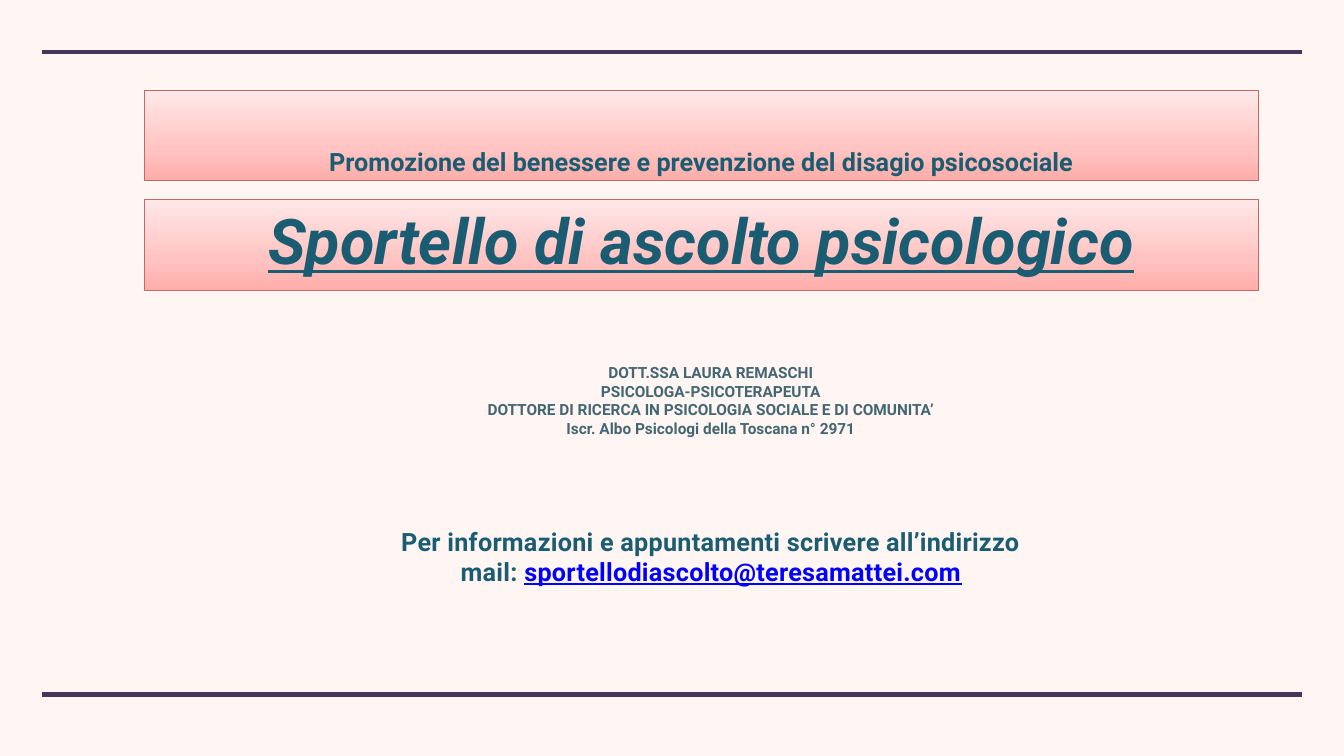
from copy import deepcopy

from lxml import etree
from pptx import Presentation
from pptx.dml.color import RGBColor
from pptx.enum.shapes import MSO_CONNECTOR as Connector, MSO_SHAPE as Shape
from pptx.enum.text import MSO_ANCHOR as Anchor, PP_ALIGN as Align
from pptx.oxml.ns import qn
from pptx.util import Cm, Pt

FONT = "Roboto"
TEAL, GREY_TEAL, LINK_BLUE = "1A5C71", "436772", "0000FF"
PURPLE, BORDER_RED = "443658", "C06A65"
BANNER_STOPS = [(0, "FFADAA"), (0.35, "FFC4C2"), (1, "FFE8E8")]


def color(hex_string):
    return RGBColor.from_string(hex_string)


def set_up_frame(shape, anchor):
    frame = shape.text_frame
    frame.word_wrap = True
    frame.vertical_anchor = anchor
    frame.margin_left = frame.margin_right = Cm(0.15)
    frame.margin_top = frame.margin_bottom = Cm(0.15)
    return frame


def style_paragraph(paragraph, size, hex_string):
    paragraph.alignment = Align.CENTER
    font = paragraph.font
    font.name, font.size, font.bold = FONT, Pt(size), True
    font.color.rgb = color(hex_string)
    return font


def add_rule(slide, left, top, width):
    rule = slide.shapes.add_connector(
        Connector.STRAIGHT, Cm(left), Cm(top), Cm(left + width), Cm(top))
    rule.line.color.rgb = color(PURPLE)
    rule.line.width = Pt(6)
    etree.SubElement(rule._element.spPr, qn("a:effectLst"))


def add_banner(slide, box, text, size, anchor):
    """Add a gradient banner and return the font of its text."""
    shape = slide.shapes.add_shape(Shape.RECTANGLE, *map(Cm, box))
    shape.shadow.inherit = False
    shape.line.color.rgb = color(BORDER_RED)
    shape.line.width = Pt(0.75)

    # The default gradient has two stops; a third is needed
    shape.fill.gradient()
    shape.fill.gradient_angle = 90
    stop_list = shape._element.spPr.find(".//" + qn("a:gsLst"))
    stop_list.append(deepcopy(stop_list[0]))
    for stop, (position, hex_string) in zip(shape.fill.gradient_stops, BANNER_STOPS):
        stop.position = position
        stop.color.rgb = color(hex_string)

    paragraph = set_up_frame(shape, anchor).paragraphs[0]
    paragraph.text = text
    return style_paragraph(paragraph, size, TEAL)


def add_credentials(slide, box, lines):
    frame = set_up_frame(slide.shapes.add_textbox(*map(Cm, box)), Anchor.BOTTOM)
    frame.text = "\n".join(lines)
    for paragraph in frame.paragraphs:
        style_paragraph(paragraph, 22, GREY_TEAL)


def add_contact(slide, box, invitation, address):
    frame = set_up_frame(slide.shapes.add_textbox(*map(Cm, box)), Anchor.MIDDLE)
    paragraph = frame.paragraphs[0]
    style_paragraph(paragraph, 36, TEAL)
    invitation_run, address_run = paragraph.add_run(), paragraph.add_run()
    invitation_run.text, address_run.text = invitation, address
    address_run.font.color.rgb = color(LINK_BLUE)
    address_run.font.underline = True
    for run in paragraph.runs:
        run.font._element.set("spc", "40")


def main():
    presentation = Presentation()
    presentation.slide_width, presentation.slide_height = Cm(67.74), Cm(38.1)
    slide = presentation.slides.add_slide(presentation.slide_layouts[6])
    slide.background.fill.solid()
    slide.background.fill.fore_color.rgb = color("FFF5F2")

    # Rules at top and bottom
    for top in (2.64, 35):
        add_rule(slide, 2.12, top, 63.5)

    # Title and the theme above it
    title_font = add_banner(slide, (7.28, 10.03, 56.13, 4.6),
                            "Sportello di ascolto psicologico", 90, Anchor.TOP)
    title_font.italic = title_font.underline = True
    add_banner(slide, (7.28, 4.57, 56.13, 4.5),
               "Promozione del benessere e prevenzione del disagio psicosociale",
               36, Anchor.BOTTOM)

    # Psychologist and contact
    add_credentials(slide, (15.62, 17.81, 40.41, 4.37), [
        "DOTT.SSA LAURA REMASCHI",
        "PSICOLOGA-PSICOTERAPEUTA",
        "DOTTORE DI RICERCA IN PSICOLOGIA SOCIALE E DI COMUNITA’",
        "Iscr. Albo Psicologi della Toscana n° 2971",
    ])
    add_contact(slide, (19.38, 25.35, 32.92, 5.36),
                "Per informazioni e appuntamenti scrivere all’indirizzo mail: ",
                "sportellodiascolto@teresamattei.com")

    presentation.save("out.pptx")


if __name__ == "__main__":
    main()
